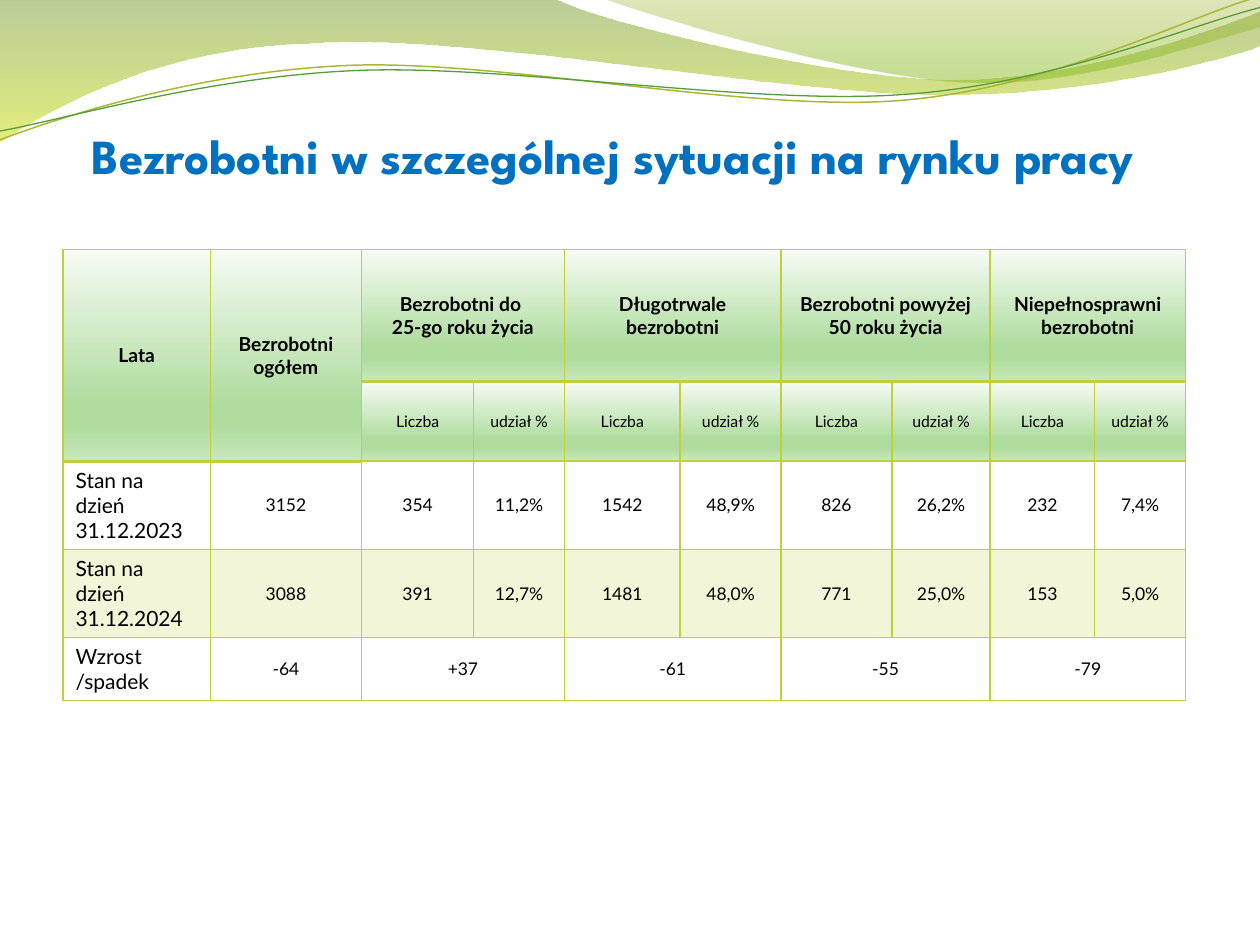
import pptx
import pptx.dml.color
import pptx.enum.text
import pptx.oxml
import pptx.oxml.ns
import pptx.util
from pptx.util import Inches

COLORS = {"title": "0070C0", "text": "000000", "lime": "C0CF3A",
          "olive": "A9B733", "green": "549E39"}
ALIGN = pptx.enum.text.PP_ALIGN
ANCHOR = pptx.enum.text.MSO_ANCHOR
NS = pptx.oxml.ns.nsdecls("a")
QN = pptx.oxml.ns.qn

# Gradient stops: position %, colour, opacity %
HEADER_STOPS = [(0, "F6FBF4", 100), (74, "AEDC9D", 100),
                (83, "AEDC9D", 100), (100, "C9E8BE", 100)]

# Wave outlines in inches: a pair is a line end, a sextet is a cubic curve
WAVES = [
    ([(0, 0), (4.4, -0.01), (4.75, 0.17, 6.63, 0.63, 7.58, 0.63),
      (8.53, 0.63, 9.58, 0.26, 10, 0.09), (10.01, 0.36),
      (9.83, 0.44, 8.69, 0.76, 7.46, 0.75), (6.22, 0.75, 3.81, 0.28, 2.57, 0.34),
      (1.29, 0.36, 0.46, 0.83, -0.01, 1.13), (0, 0)],
     [(0, "69921C", 45), (100, "CCE10F", 55)]),
    ([(4.79, -0.01), (5.09, 0.11, 6.82, 0.62, 7.68, 0.65),
      (8.55, 0.69, 9.61, 0.32, 10, 0.21), (10, 0), (4.79, -0.01)],
     [(0, "9BAA1A", 30), (80, "81BA16", 45)]),
]
STRANDS = [
    ([(0, 1.11), (0.48, 0.93, 1.57, 0.57, 2.76, 0.52),
      (3.95, 0.47, 5.92, 0.89, 7.12, 0.8), (8.33, 0.71, 9.38, 0.15, 9.97, -0.02)],
     "olive", 0.85),
    ([(0, 1.04), (0.47, 0.96, 1.63, 0.61, 2.83, 0.56),
      (4.02, 0.51, 5.97, 0.84, 7.17, 0.75), (8.36, 0.67, 9.41, 0.21, 10, 0.06)],
     "green", 0.75),
]

GROUPS = ["Bezrobotni do \n25-go roku życia", "Długotrwale bezrobotni",
          "Bezrobotni powyżej 50 roku życia", "Niepełnosprawni bezrobotni"]
BODY = [
    ["Stan na dzień 31.12.2023", "3152", "354", "11,2%", "1542", "48,9%",
     "826", "26,2%", "232", "7,4%"],
    ["Stan na dzień 31.12.2024", "3088", "391", "12,7%", "1481", "48,0%",
     "771", "25,0%", "153", "5,0%"],
    ["Wzrost\n/spadek", "-64", "+37", "", "-61", "", "-55", "", "-79", ""],
]
COLUMNS = [1.17, 1.2, 0.89, 0.72, 0.92, 0.8, 0.88, 0.78, 0.83, 0.72]
ROWS = [1.05, 0.63, 0.7, 0.7, 0.5]


def rgb(name):
    return pptx.dml.color.RGBColor.from_string(COLORS[name])


def set_attrs(obj, values):
    for name, value in values.items():
        setattr(obj, name, value)


def fill_gradient(fill, parent, stops):
    """Fill from top to bottom with the given stops."""
    fill.gradient()
    fill.gradient_angle = 270
    stop_list = parent.find(".//" + QN("a:gsLst"))
    for stop in list(stop_list):
        stop_list.remove(stop)
    for pos, color, alpha in stops:
        stop_list.append(pptx.oxml.parse_xml(
            f'<a:gs {NS} pos="{pos * 1000}"><a:srgbClr val="{color}">'
            f'<a:alpha val="{alpha * 1000}"/></a:srgbClr></a:gs>'))


def add_outline(s, outline, left, top, close):
    """Build a freeform, then join each sextet's three points into a curve."""
    points = [(left + Inches(x), top + Inches(y)) for seg in outline
              for x, y in zip(seg[::2], seg[1::2])]
    builder = s.shapes.build_freeform(*points[0])
    builder.add_line_segments(points[1:], close=close)
    sp = builder.convert_to_shape()
    sp.shadow.inherit = False
    lines = iter(sp._element.findall(".//" + QN("a:lnTo")))
    for seg in outline[1:]:
        first = next(lines)
        if len(seg) == 6:
            curve = pptx.oxml.parse_xml(f"<a:cubicBezTo {NS}/>")
            first.addprevious(curve)
            for line in (first, next(lines), next(lines)):
                curve.append(line[0])
                line.getparent().remove(line)
    return sp


def add_waves(s, left, top):
    for outline, stops in WAVES:
        sp = add_outline(s, outline, left, top, True)
        fill_gradient(sp.fill, sp._element.spPr, stops)
        sp.line.fill.background()
    for outline, color, width in STRANDS:
        sp = add_outline(s, outline, left, top, False)
        sp.fill.background()
        sp.line.color.rgb = rgb(color)
        sp.line.width = pptx.util.Pt(width)


def style_text(tf, font, size, color, bold, align):
    for p in tf.paragraphs:
        p.alignment = align
        for r in p.runs:
            set_attrs(r.font, {"name": font, "size": pptx.util.Pt(size), "bold": bold})
            r.font.color.rgb = rgb(color)


def add_title(s, left, top, width, height):
    tf = s.shapes.add_textbox(left, top, width, height).text_frame
    set_attrs(tf, {"word_wrap": True, "vertical_anchor": ANCHOR.BOTTOM,
                   "margin_left": 0, "margin_right": 0,
                   "margin_top": Inches(0.05), "margin_bottom": 0})
    tf.text = "Bezrobotni w szczególnej sytuacji na rynku pracy"
    style_text(tf, "League Spartan", 28, "title", True, ALIGN.CENTER)


def set_borders(cell, bottom):
    tc_pr = cell._tc.get_or_add_tcPr()
    for i, (side, width) in enumerate([("L", 1), ("R", 1), ("T", 1), ("B", bottom)]):
        tc_pr.insert(i, pptx.oxml.parse_xml(
            f'<a:ln{side} {NS} w="{pptx.util.Pt(width)}"><a:solidFill>'
            f'<a:srgbClr val="{COLORS["lime"]}"/></a:solidFill></a:ln{side}>'))


def style_cell(cell, row, col):
    header, label = row < 2, row >= 2 and col == 0
    cell.vertical_anchor = ANCHOR.TOP if label else ANCHOR.MIDDLE
    size = (11, 9)[row] if header else 12 if label else 10
    style_text(cell.text_frame, "Lato", size, "text", row == 0,
               ALIGN.LEFT if label else ALIGN.CENTER)
    if header:
        fill_gradient(cell.fill, cell._tc, HEADER_STOPS)
    elif row == 3:
        cell.fill.solid()
        cell.fill.fore_color.rgb = rgb("lime")
        cell._tc.tcPr.find(".//" + QN("a:srgbClr")).append(
            pptx.oxml.parse_xml(f'<a:alpha {NS} val="20000"/>'))
    else:
        cell.fill.background()
    set_borders(cell, 2 if row == 0 or (row == 1 and col < 2) else 1)


def add_unemployment_table(s, left, top, width, height):
    table = s.shapes.add_table(len(ROWS), len(COLUMNS), left, top, width, height).table
    set_attrs(table, {"first_row": False, "horz_banding": False})
    for column, share in zip(table.columns, COLUMNS):
        column.width = int(width * share / sum(COLUMNS))
    for row, share in zip(table.rows, ROWS):
        row.height = int(height * share / sum(ROWS))

    # Two header rows, then the figures
    heads = ["Lata", "Bezrobotni ogółem"]
    for group in GROUPS:
        heads += [group, ""]
    lines = [heads, ["", ""] + ["Liczba", "udział %"] * len(GROUPS)] + BODY
    for i, line in enumerate(lines):
        for j, text in enumerate(line):
            cell = table.cell(i, j)
            if text:
                cell.text = text
            style_cell(cell, i, j)

    # Merged cells
    for j in range(2):
        table.cell(0, j).merge(table.cell(1, j))
    for i in (0, len(ROWS) - 1):
        for j in range(2, len(COLUMNS), 2):
            table.cell(i, j).merge(table.cell(i, j + 1))


def main():
    prs = pptx.Presentation()
    set_attrs(prs, {"slide_width": Inches(10), "slide_height": Inches(7.5)})
    s = prs.slides.add_slide(prs.slide_layouts[6])
    add_waves(s, Inches(0), Inches(0))
    add_title(s, Inches(0.2), Inches(0.21), Inches(9.33), Inches(1.25))
    add_unemployment_table(s, Inches(0.5), Inches(1.98), Inches(8.91), Inches(3.58))
    prs.save("out.pptx")


if __name__ == "__main__":
    main()
